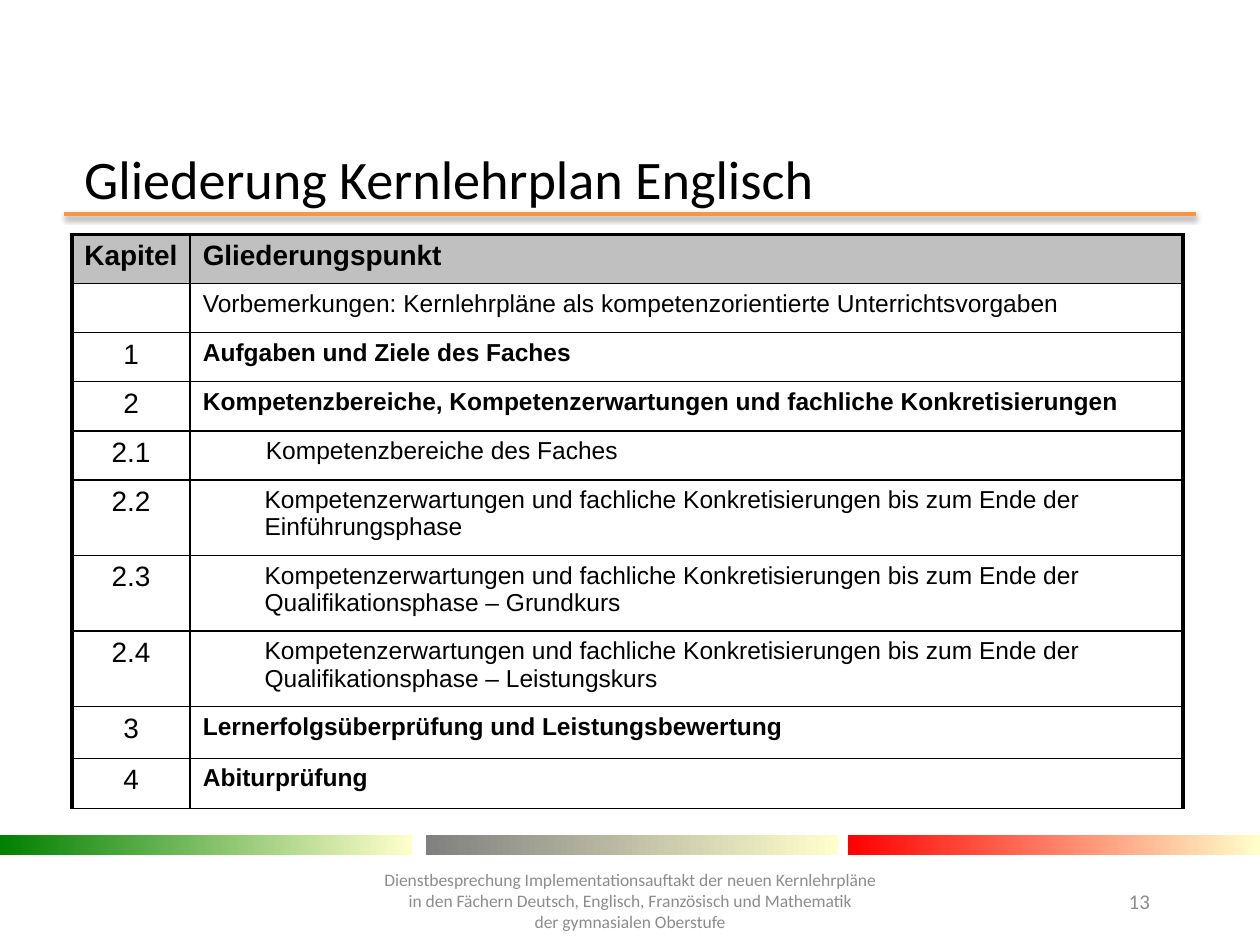
import dataclasses

import lxml.etree
import pptx
import pptx.dml.color
import pptx.enum.shapes
import pptx.enum.text
import pptx.oxml.ns
import pptx.util

Inches = pptx.util.Inches
Pt = pptx.util.Pt
ALIGN = pptx.enum.text.PP_ALIGN
ANCHOR = pptx.enum.text.MSO_ANCHOR


@dataclasses.dataclass(frozen=True)
class Theme:
    """Colours, fonts and type sizes of the slide."""
    text: str = "000000"
    muted: str = "8C8C8C"
    accent: str = "F79646"
    header: str = "C0C0C0"
    fade: str = "FFFFCC"
    bars: tuple = ("008000", "808080", "FF0000")
    slide_font: str = "Calibri"
    table_font: str = "Arial"
    title_size: float = 31
    heading_size: float = 16
    body_size: float = 14
    number_size: float = 12
    footer_size: float = 10
    thick: float = 2.25
    thin: float = 1


THEME = Theme()
EXPECTATIONS = "Kompetenzerwartungen und fachliche Konkretisierungen bis zum Ende der "
CHAPTERS = [
    ("", "Vorbemerkungen: Kernlehrpläne als kompetenzorientierte Unterrichtsvorgaben", False, 0),
    ("1", "Aufgaben und Ziele des Faches", True, 0),
    ("2", "Kompetenzbereiche, Kompetenzerwartungen und fachliche Konkretisierungen", True, 0),
    ("2.1", "Kompetenzbereiche des Faches", False, 0.5),
    ("2.2", EXPECTATIONS + "Einführungsphase", False, 0.49),
    ("2.3", EXPECTATIONS + "Qualifikationsphase – Grundkurs", False, 0.49),
    ("2.4", EXPECTATIONS + "Qualifikationsphase – Leistungskurs", False, 0.49),
    ("3", "Lernerfolgsüberprüfung und Leistungsbewertung", True, 0),
    ("4", "Abiturprüfung", True, 0),
]
COLUMN_WIDTHS = [0.94, 7.88]
ROW_HEIGHTS = [0.39] * 5 + [0.6] * 3 + [0.41, 0.4]
FOOTER_LINES = [
    "Dienstbesprechung Implementationsauftakt der neuen Kernlehrpläne",
    "in den Fächern Deutsch, Englisch, Französisch und Mathematik",
    "der gymnasialen Oberstufe",
]


def rgb(value):
    """Return the colour for a hex value."""
    return pptx.dml.color.RGBColor.from_string(value)


def write(paragraph, text, color, align=ALIGN.LEFT, **formats):
    """Fill a paragraph with text and format its runs."""
    paragraph.text = text
    paragraph.alignment = align
    for run in paragraph.runs:
        run.font.color.rgb = rgb(color)
        for name, value in formats.items():
            setattr(run.font, name, value)


def add_text(slide, box, text, size, color, anchor=ANCHOR.TOP, align=ALIGN.LEFT):
    """Add a wrapped text box in the slide font."""
    frame = slide.shapes.add_textbox(*map(Inches, box)).text_frame
    frame.word_wrap = True
    frame.vertical_anchor = anchor
    write(frame.paragraphs[0], text, color, align, name=THEME.slide_font, size=Pt(size))


def add_rule(slide, left, right, top):
    """Add the title rule with its soft shadow."""
    line = slide.shapes.add_connector(
        pptx.enum.shapes.MSO_CONNECTOR.STRAIGHT, *map(Inches, (left, top, right, top)))
    line.line.color.rgb = rgb(THEME.accent)
    line.line.width = Pt(2)
    qn = pptx.oxml.ns.qn
    effects = lxml.etree.SubElement(line._element.spPr, qn("a:effectLst"))
    shadow = lxml.etree.SubElement(
        effects, qn("a:outerShdw"), blurRad=str(Pt(3.1)), dist=str(Pt(1.6)),
        dir="5400000", rotWithShape="0")
    color = lxml.etree.SubElement(shadow, qn("a:srgbClr"), val=THEME.text)
    lxml.etree.SubElement(color, qn("a:alpha"), val="38000")


def add_bar(slide, left, color):
    """Add a bar that fades from its colour to pale yellow."""
    bar = slide.shapes.add_shape(
        pptx.enum.shapes.MSO_SHAPE.RECTANGLE, *map(Inches, (left, 6.63, 3.27, 0.16)))
    bar.shadow.inherit = False
    bar.line.fill.background()
    bar.fill.gradient()
    bar.fill.gradient_angle = 0
    for stop, position, value in zip(bar.fill.gradient_stops, (0, 1), (color, THEME.fade)):
        stop.position = position
        stop.color.rgb = rgb(value)


def set_borders(cell, widths):
    """Draw the left, right, top and bottom borders of a cell."""
    qn = pptx.oxml.ns.qn
    properties = cell._tc.get_or_add_tcPr()
    for index, (side, width) in enumerate(zip("LRTB", widths)):
        line = lxml.etree.Element(qn(f"a:ln{side}"), w=str(Pt(width)))
        fill = lxml.etree.SubElement(line, qn("a:solidFill"))
        lxml.etree.SubElement(fill, qn("a:srgbClr"), val=THEME.text)
        properties.insert(index, line)


def fill_cell(cell, text, size, bold=False, align=ALIGN.LEFT, indent=0):
    """Write one table cell, indented when it holds a subsection."""
    paragraph = cell.text_frame.paragraphs[0]
    write(paragraph, text, THEME.text, align,
          name=THEME.table_font, size=Pt(size), bold=bold)
    if not text:
        paragraph._p.get_or_add_endParaRPr().set("sz", str(size * 100))
    if indent:
        paragraph.level = 1
        paragraph._p.get_or_add_pPr().set("marL", str(Inches(indent)))
        paragraph._p.get_or_add_pPr().set("indent", "0")


def add_outline_table(slide):
    """Add the table of chapters."""
    table = slide.shapes.add_table(
        len(ROW_HEIGHTS), len(COLUMN_WIDTHS), Inches(0.57), Inches(1.86),
        Inches(sum(COLUMN_WIDTHS)), Inches(sum(ROW_HEIGHTS))).table
    table.first_row = table.horz_banding = False
    for column, width in zip(table.columns, COLUMN_WIDTHS):
        column.width = Inches(width)
    for row, height in zip(table.rows, ROW_HEIGHTS):
        row.height = Inches(height)

    for column, heading in enumerate(("Kapitel", "Gliederungspunkt")):
        fill_cell(table.cell(0, column), heading, THEME.heading_size, True)
    table.cell(0, 0).margin_right = Inches(0.05)
    for row, (number, title, bold, indent) in enumerate(CHAPTERS, 1):
        fill_cell(table.cell(row, 0), number, THEME.heading_size, align=ALIGN.CENTER)
        fill_cell(table.cell(row, 1), title, THEME.body_size, bold, indent=indent)

    thick, thin = THEME.thick, THEME.thin
    for row in range(len(ROW_HEIGHTS)):
        for column in range(len(COLUMN_WIDTHS)):
            cell = table.cell(row, column)
            if row == 0:
                cell.fill.solid()
                cell.fill.fore_color.rgb = rgb(THEME.header)
            else:
                cell.fill.background()
            left, right = (thick, thin) if column == 0 else (thin, thick)
            set_borders(cell, (left, right, thick if row == 0 else thin, thin))


def main():
    """Build the slide and save it."""
    presentation = pptx.Presentation()
    presentation.slide_width, presentation.slide_height = Inches(10), Inches(7.5)
    slide = presentation.slides.add_slide(presentation.slide_layouts[6])
    add_rule(slide, 0.51, 9.49, 1.7)
    for left, color in zip((0, 3.38, 6.73), THEME.bars):
        add_bar(slide, left, color)
    add_text(slide, (0.57, 1.18, 9, 0.47), "Gliederung Kernlehrplan Englisch",
             THEME.title_size, THEME.text, ANCHOR.MIDDLE)
    add_outline_table(slide)
    add_text(slide, (8.86, 7, 0.64, 0.4), "13", THEME.number_size, THEME.muted)
    add_text(slide, (2.56, 6.87, 4.88, 0.56), "\v".join(FOOTER_LINES),
             THEME.footer_size, THEME.muted, ANCHOR.MIDDLE, ALIGN.CENTER)
    presentation.save("out.pptx")


if __name__ == "__main__":
    main()
